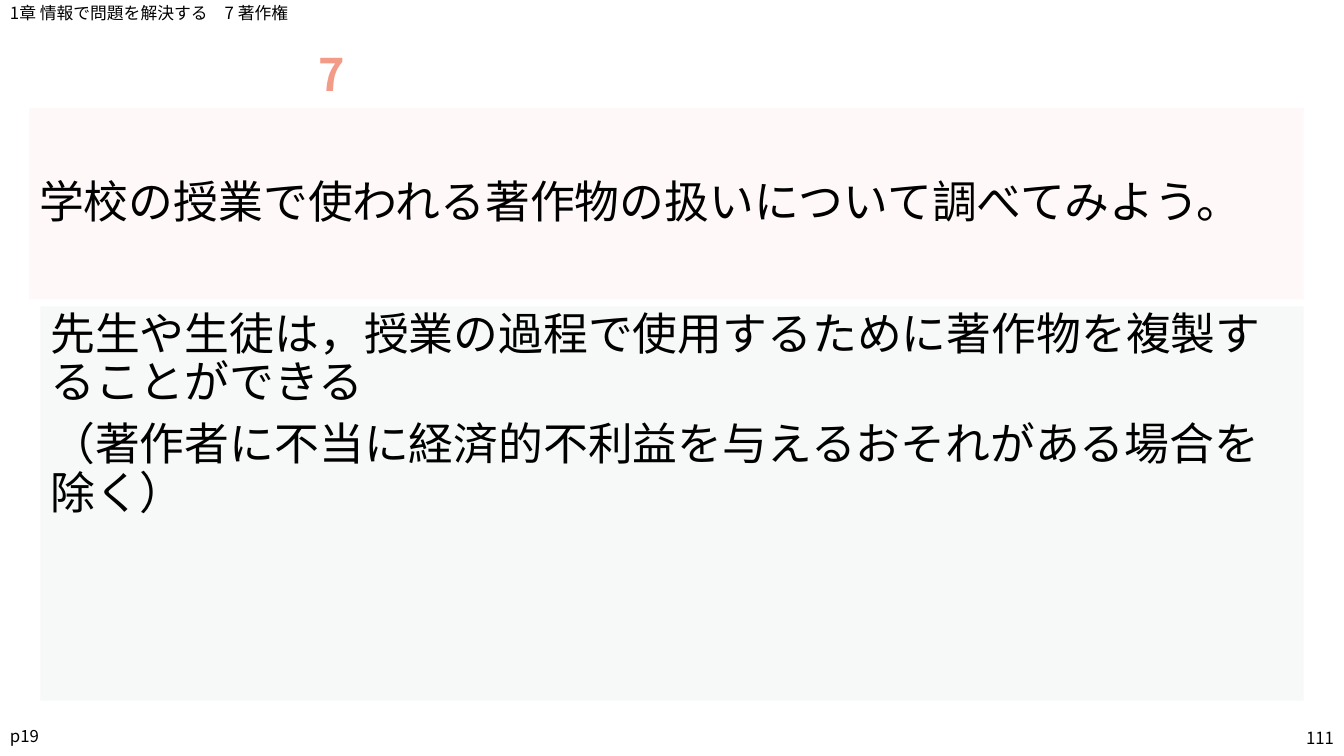
from dataclasses import dataclass
from typing import Optional

import pptx
import pptx.dml.color
import pptx.enum.shapes
import pptx.enum.text
import pptx.oxml
import pptx.oxml.ns
import pptx.slide
import pptx.util
from lxml import etree

RGBColor = pptx.dml.color.RGBColor
Inches = pptx.util.Inches
Align = pptx.enum.text.PP_ALIGN
Anchor = pptx.enum.text.MSO_ANCHOR

BLACK = RGBColor(0x00, 0x00, 0x00)
CORAL = RGBColor(0xF2, 0x9B, 0x87)
PALE_PINK = RGBColor(0xFE, 0xF8, 0xF8)
PALE_GRAY = RGBColor(0xF7, 0xF8, 0xF8)
FONT = "Noto Sans CJK JP"


@dataclass(frozen=True)
class Block:
    left: float
    top: float
    width: float
    height: float
    lines: tuple[str, ...]
    size: int
    fill: Optional[RGBColor] = None
    color: RGBColor = BLACK
    bold: bool = False
    align: Align = Align.LEFT
    anchor: Anchor = Anchor.MIDDLE
    line_spacing: float = 0.9


BLOCKS = (
    Block(0.4, 3.04, 12.53, 3.91,
          ("先生や生徒は，授業の過程で使用するために著作物を複製することができる",
           "（著作者に不当に経済的不利益を与えるおそれがある場合を除く）"),
          32, fill=PALE_GRAY, anchor=Anchor.TOP),
    Block(10.33, 7.15, 3, 0.33, ("111",), 12, align=Align.RIGHT, line_spacing=1.0),
    Block(0, 0, 9.59, 0.28, ("1章 情報で問題を解決する　7 著作権",), 12, anchor=Anchor.TOP),
    Block(0, 7.15, 4.4, 0.33, ("p19",), 12),
    Block(0.29, 1.07, 12.64, 1.9,
          ("学校の授業で使われる著作物の扱いについて調べてみよう。",), 32, fill=PALE_PINK),
    Block(3.06, 0.48, 0.74, 0.56, ("7",), 32, color=CORAL, bold=True),
)


def draw_block(slide: pptx.slide.Slide, block: Block) -> None:
    bounds = [Inches(n) for n in (block.left, block.top, block.width, block.height)]
    if block.fill is None:
        panel = slide.shapes.add_textbox(*bounds)
    else:
        panel = slide.shapes.add_shape(pptx.enum.shapes.MSO_SHAPE.RECTANGLE, *bounds)
        panel.shadow.inherit = False
        panel.fill.solid()
        panel.fill.fore_color.rgb = block.fill
        panel.line.fill.background()

    frame = panel.text_frame
    frame.word_wrap = True
    frame.vertical_anchor = block.anchor
    for index, line in enumerate(block.lines):
        paragraph = frame.add_paragraph() if index else frame.paragraphs[0]
        paragraph.text = line
        paragraph.alignment = block.align
        paragraph.line_spacing = block.line_spacing
        if index:
            paragraph.space_before = pptx.util.Pt(10)
        paragraph.font.size = pptx.util.Pt(block.size)
        paragraph.font.bold = block.bold
        paragraph.font.color.rgb = block.color
        paragraph.font.name = FONT
        defaults = paragraph._p.pPr.find(pptx.oxml.ns.qn("a:defRPr"))
        etree.SubElement(defaults, pptx.oxml.ns.qn("a:ea"), typeface=FONT)


def main() -> None:
    presentation = pptx.Presentation()
    presentation.slide_width = Inches(13.33)
    presentation.slide_height = Inches(7.5)
    slide = presentation.slides.add_slide(presentation.slide_layouts[6])
    for block in BLOCKS:
        draw_block(slide, block)
    presentation.save("out.pptx")


if __name__ == "__main__":
    main()
